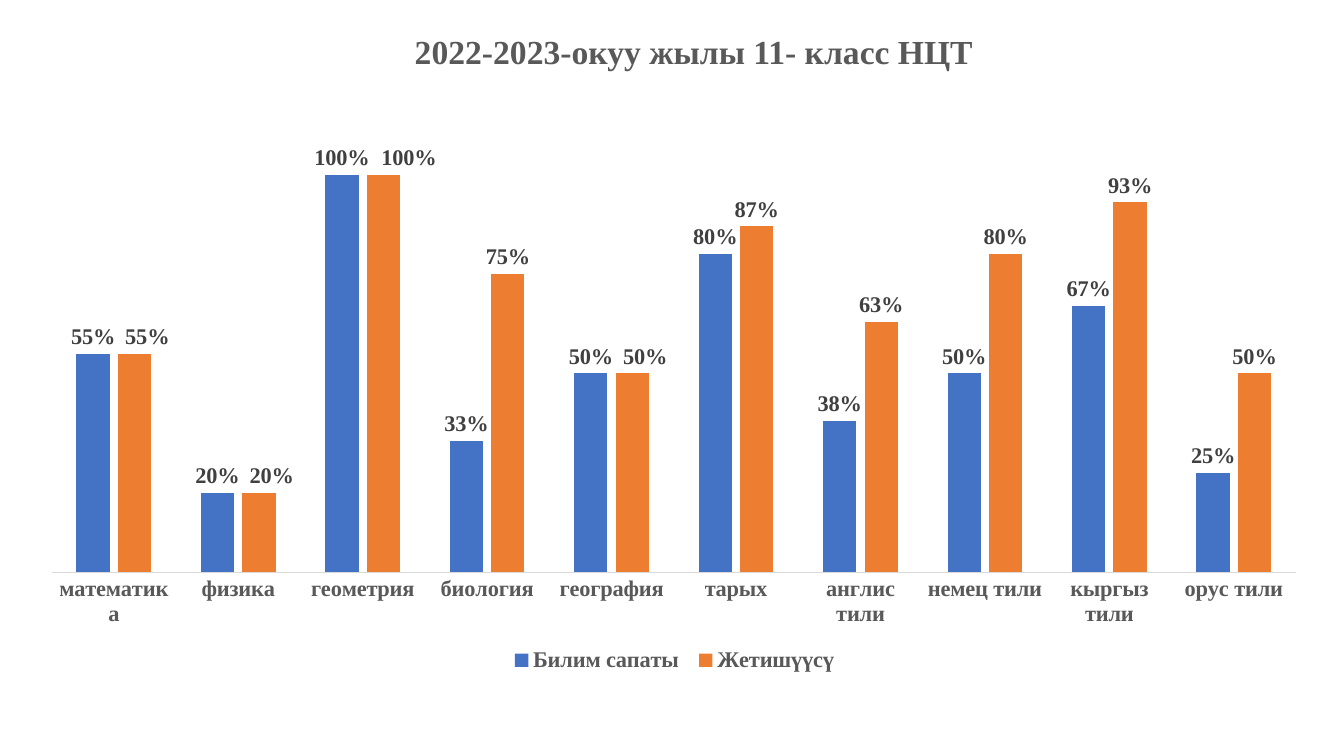
from lxml.etree import SubElement
from pptx import Presentation
from pptx.chart.data import CategoryChartData
from pptx.dml.color import RGBColor
from pptx.enum.chart import (XL_CHART_TYPE, XL_LABEL_POSITION,
                             XL_LEGEND_POSITION, XL_TICK_LABEL_POSITION,
                             XL_TICK_MARK)
from pptx.enum.text import MSO_ANCHOR, PP_ALIGN
from pptx.oxml.ns import qn
from pptx.util import Inches, Pt

GREY, DARK, RULE = "595959", "404040", "D9D9D9"
SUBJECTS = ["математика", "физика", "геометрия", "биология", "география",
            "тарых", "англис тили", "немец тили", "кыргыз тили", "орус тили"]
# Name, colour, values, sideways label shifts by point
SERIES = [
    ("Билим сапаты ", "4472C4",
     [0.55, 0.2, 1, 0.33, 0.5, 0.8, 0.38, 0.5, 0.67, 0.25], {}),
    ("Жетишүүсү", "ED7D31",
     [0.55, 0.2, 1, 0.75, 0.5, 0.87, 0.63, 0.8, 0.93, 0.5],
     {0: 0.01, 1: 0.01, 2: 0.02, 4: 0.01}),
]


def color(code):
    return RGBColor.from_string(code)


def assign(item, **values):
    for name, value in values.items():
        setattr(item, name, value)


def layout(node, **values):
    """Give a chart part a manual layout."""
    for old in node.findall(qn("c:layout")):
        node.remove(old)
    outer = SubElement(node, qn("c:layout"))
    inner = SubElement(outer, qn("c:manualLayout"))
    for name, value in values.items():
        SubElement(inner, qn("c:" + name)).set("val", str(value))
    node.remove(outer)
    return outer


class Deck:
    style = {"name": "Times New Roman", "bold": True}

    def __init__(self):
        self.file = Presentation()
        assign(self.file, slide_width=Inches(13.33), slide_height=Inches(7.5))
        self.slide = self.file.slides.add_slide(self.file.slide_layouts[5])

    def font(self, font, size, code):
        assign(font, size=Pt(size), **self.style)
        font.color.rgb = color(code)

    def title(self, text, left, top, width, height):
        shape = self.slide.shapes.title
        assign(shape, left=Inches(left), top=Inches(top),
               width=Inches(width), height=Inches(height))
        frame = shape.text_frame
        assign(frame, text=text, word_wrap=True,
               vertical_anchor=MSO_ANCHOR.MIDDLE)
        line = frame.paragraphs[0]
        line.alignment = PP_ALIGN.CENTER
        self.font(line.runs[0].font, 24, GREY)

    def labels(self, series, shifts):
        marks = series.data_labels
        assign(marks, show_value=True, number_format="0%",
               number_format_is_linked=False,
               position=XL_LABEL_POSITION.OUTSIDE_END)
        self.font(marks.font, 16, DARK)
        for index in shifts:
            label = series.points[index].data_label
            self.font(label.font, 16, DARK)
            label.position = XL_LABEL_POSITION.OUTSIDE_END
        for node in marks._element.findall(qn("c:dLbl")):
            mark = node.find(qn("c:idx"))
            shift = shifts[int(mark.get("val"))]
            mark.addnext(layout(node, x=shift, y=0))

    def chart(self, left, top, width, height):
        data = CategoryChartData(number_format="0%")
        data.categories = SUBJECTS
        for name, _, values, _ in SERIES:
            data.add_series(name, values)
        chart = self.slide.shapes.add_chart(
            XL_CHART_TYPE.COLUMN_CLUSTERED, Inches(left), Inches(top),
            Inches(width), Inches(height), data).chart
        assign(chart, has_title=False, has_legend=True)
        assign(chart.font, name="Calibri", size=Pt(10))

        # Legend
        assign(chart.legend, position=XL_LEGEND_POSITION.BOTTOM,
               include_in_layout=False)
        self.font(chart.legend.font, 16, GREY)

        # Axes
        axis = chart.category_axis
        assign(axis, major_tick_mark=XL_TICK_MARK.NONE,
               minor_tick_mark=XL_TICK_MARK.NONE, has_major_gridlines=False,
               tick_label_position=XL_TICK_LABEL_POSITION.NEXT_TO_AXIS)
        self.font(axis.tick_labels.font, 16, GREY)
        axis.format.line.width = Pt(0.75)
        axis.format.line.color.rgb = color(RULE)
        assign(chart.value_axis, visible=False, has_major_gridlines=False,
               minimum_scale=0, maximum_scale=1.2)

        # Columns
        plot = chart.plots[0]
        assign(plot, gap_width=150, overlap=-25, vary_by_categories=False)
        for series, (_, code, _, shifts) in zip(plot.series, SERIES):
            series.format.fill.solid()
            series.format.fill.fore_color.rgb = color(code)
            self.labels(series, shifts)

        # Plot area
        area = chart._chartSpace.find(".//" + qn("c:plotArea"))
        area.insert(0, layout(area, layoutTarget="inner", xMode="edge",
                              yMode="edge", x=0.012, y=0.026,
                              w=0.975, h=0.798))


def main():
    deck = Deck()
    deck.title("2022-2023-окуу жылы 11- класс НЦТ", 3.55, 0.26, 6.66, 0.5)
    deck.chart(0.36, 0.79, 12.66, 5.93)
    deck.file.save("out.pptx")


if __name__ == "__main__":
    main()
